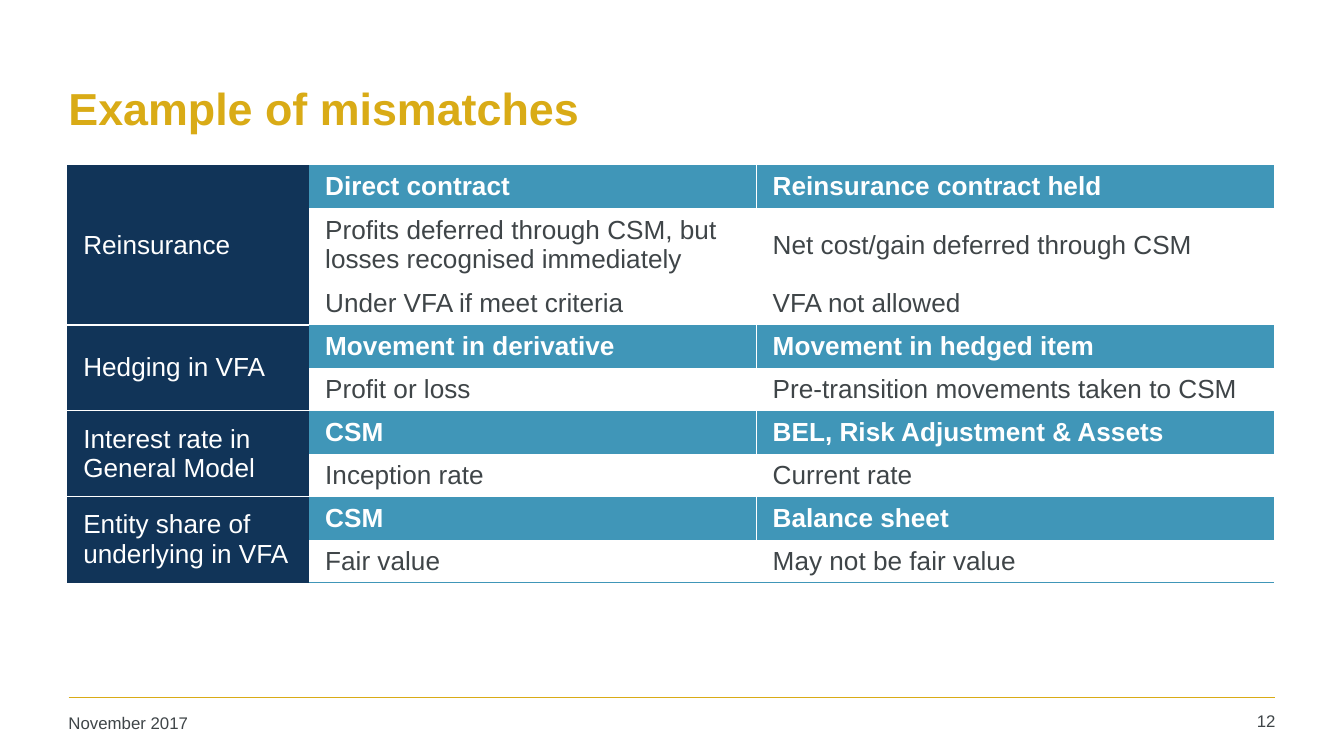
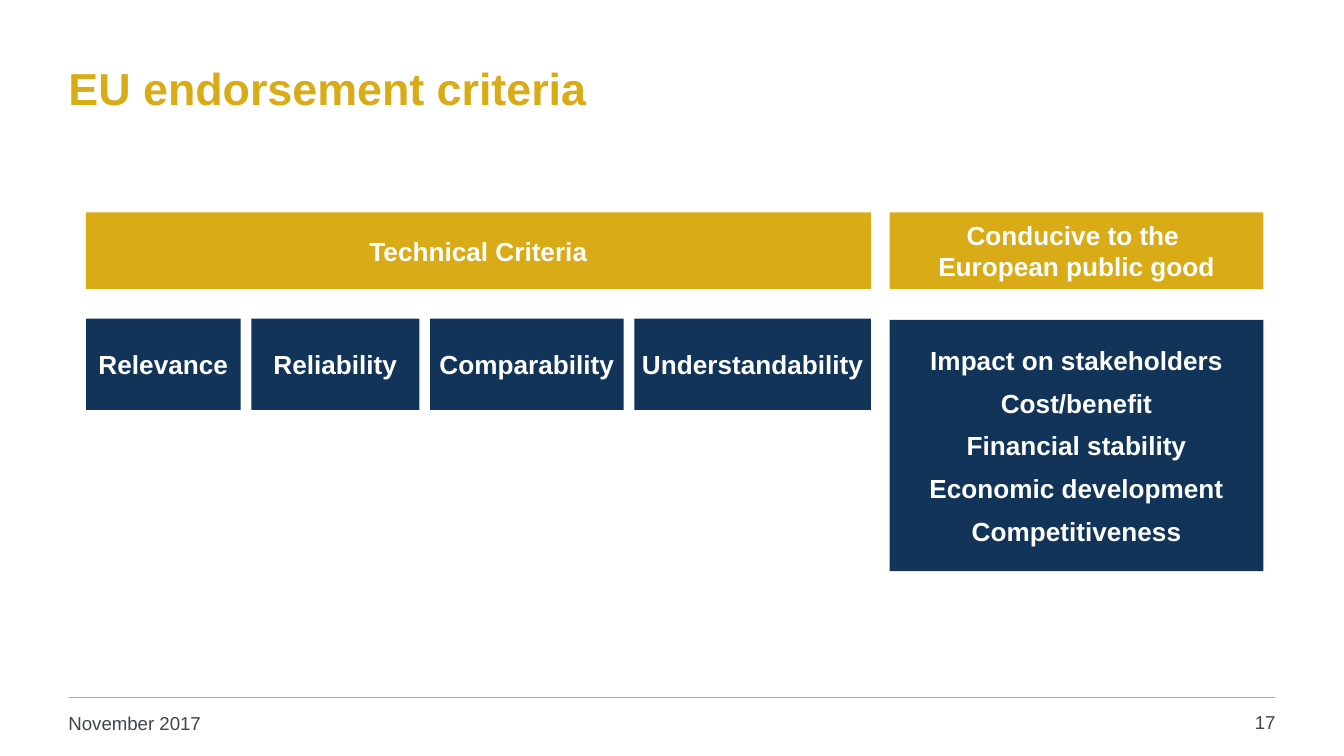
import pptx
import pptx.util
import pptx.dml.color
import pptx.enum.shapes
import pptx.enum.text
import pptx.oxml.ns
from lxml import etree

Inches = pptx.util.Inches
Pt = pptx.util.Pt
RGBColor = pptx.dml.color.RGBColor
Align = pptx.enum.text.PP_ALIGN
MIDDLE = pptx.enum.text.MSO_ANCHOR.MIDDLE
qn = pptx.oxml.ns.qn

GOLD = RGBColor(0xD9, 0xAB, 0x16)
NAVY = RGBColor(0x11, 0x34, 0x58)
BLUE = RGBColor(0x40, 0x96, 0xB8)
GREY = RGBColor(0x3F, 0x45, 0x48)
WHITE = RGBColor(0xFF, 0xFF, 0xFF)

MISMATCHES = [
    ("Reinsurance", [
        ("Direct contract", "Reinsurance contract held"),
        ("Profits deferred through CSM, but losses recognised immediately",
         "Net cost/gain deferred through CSM"),
        ("Under VFA if meet criteria", "VFA not allowed")]),
    ("Hedging in VFA", [
        ("Movement in derivative", "Movement in hedged item"),
        ("Profit or loss", "Pre-transition movements taken to CSM")]),
    ("Interest rate in General Model", [
        ("CSM", "BEL, Risk Adjustment & Assets"),
        ("Inception rate", "Current rate")]),
    ("Entity share of underlying in VFA", [
        ("CSM", "Balance sheet"),
        ("Fair value", "May not be fair value")]),
]
CRITERIA = [("Relevance", 1.15), ("Reliability", 1.25),
            ("Comparability", 1.44), ("Understandability", 1.76)]
PUBLIC_GOOD = ["Impact on stakeholders", "Cost/benefit", "Financial stability",
               "Economic development", "Competitiveness"]


class Deck:
    """Holds the shared style and the slide being built."""

    def __init__(self):
        self.prs = pptx.Presentation()
        self.prs.slide_width = Inches(10)
        self.prs.slide_height = Inches(10) * 9 // 16

    def slide(self, title, number, footer_size, title_lift=0):
        self.s = self.prs.slides.add_slide(self.prs.slide_layouts[6])
        self.rule(0.51, 9.49, 5.19)
        tf = self.text(title, 0.43, 0.33, 9.07, 0.94, 24, GOLD, bold=True, anchor=MIDDLE)
        tf.margin_bottom += Inches(2 * title_lift)
        self.text("November 2017", 0.43, 5.26, 2.2, 0.27, footer_size, GREY)
        self.text(number, 8.86, 5.25, 0.71, 0.28, footer_size, GREY, align=Align.RIGHT)

    def style(self, tf, size, color, bold=False, align=Align.LEFT):
        for p in tf.paragraphs:
            p.alignment = align
            for r in p.runs:
                r.font.name = "Arial"
                r.font.size = Pt(size)
                r.font.bold = bold
                r.font.color.rgb = color

    def margins(self, target, x, y):
        target.margin_left = target.margin_right = Inches(x)
        target.margin_top = target.margin_bottom = Inches(y)

    def rule(self, left, right, top):
        line = self.s.shapes.add_connector(
            pptx.enum.shapes.MSO_CONNECTOR.STRAIGHT,
            Inches(left), Inches(top), Inches(right), Inches(top))
        line.line.color.rgb = GOLD
        line.line.width = Pt(1)
        etree.SubElement(line._element.spPr, qn("a:effectLst"))

    def text(self, text, left, top, width, height, size, color,
             bold=False, align=Align.LEFT, anchor=pptx.enum.text.MSO_ANCHOR.TOP):
        sp = self.s.shapes.add_textbox(Inches(left), Inches(top), Inches(width), Inches(height))
        tf = sp.text_frame
        tf.word_wrap = True
        tf.vertical_anchor = anchor
        self.margins(tf, 0.08, 0.04)
        tf.text = text
        self.style(tf, size, color, bold, align)
        return tf

    def box(self, lines, left, top, width, height, fill, inset=0.06, space_after=0):
        sp = self.s.shapes.add_shape(
            pptx.enum.shapes.MSO_SHAPE.RECTANGLE,
            Inches(left), Inches(top), Inches(width), Inches(height))
        sp.shadow.inherit = False
        sp.fill.solid()
        sp.fill.fore_color.rgb = fill
        sp.line.fill.background()
        tf = sp.text_frame
        tf.word_wrap = True
        tf.vertical_anchor = MIDDLE
        self.margins(tf, inset, 0.06)
        tf.text = "\n".join(lines)
        self.style(tf, 14, WHITE, True, Align.CENTER)
        for p in tf.paragraphs:
            p.space_after = Pt(space_after)

    def borders(self, cell, **colors):
        tcPr = cell._tc.get_or_add_tcPr()
        for i, side in enumerate("LRTB"):
            color = colors.get(side)
            ln = etree.Element(qn("a:ln" + side), w=str(Pt(1)))
            if color is None:
                etree.SubElement(ln, qn("a:noFill"))
            else:
                fill = etree.SubElement(ln, qn("a:solidFill"))
                etree.SubElement(fill, qn("a:srgbClr"), val=str(color))
            tcPr.insert(i, ln)

    def cell(self, cell, text, fill, color, bold=False):
        cell.text = text
        cell.vertical_anchor = MIDDLE
        self.margins(cell, 0.12, 0.04)
        if fill is None:
            cell.fill.background()
        else:
            cell.fill.solid()
            cell.fill.fore_color.rgb = fill
        self.style(cell.text_frame, 14, color, bold)

    def table(self, groups, left, top, widths, heights):
        table = self.s.shapes.add_table(
            len(heights), len(widths), Inches(left), Inches(top),
            Inches(sum(widths)), Inches(sum(heights))).table
        table.first_row = table.horz_banding = False
        for column, width in zip(table.columns, widths):
            column.width = Inches(width)
        for row, height in zip(table.rows, heights):
            row.height = Inches(height)
        first = 0
        for topic, rows in groups:
            end = first + len(rows)
            for y, pair in enumerate(rows, first):
                header = y == first
                last = y == len(heights) - 1
                self.cell(table.cell(y, 0), topic if header else "", NAVY, WHITE)
                self.borders(table.cell(y, 0),
                             T=WHITE if header and y > 0 else None,
                             B=WHITE if end < len(heights) else None)
                for x, text in enumerate(pair, 1):
                    cell = table.cell(y, x)
                    self.cell(cell, text, BLUE if header else None,
                              WHITE if header else GREY, header)
                    self.borders(cell, B=BLUE if last else None,
                                 **{"R" if x == 1 else "L": WHITE})
            table.cell(first, 0).merge(table.cell(end - 1, 0))
            first = end


def main():
    deck = Deck()

    deck.slide("Example of mismatches", "12", 9)
    deck.table(MISMATCHES, 0.5, 1.23, [1.8, 3.33, 3.85], [0.32, 0.54] + [0.32] * 7)

    deck.slide("EU endorsement criteria", "17", 10, title_lift=0.15)
    deck.box(["Technical Criteria"], 0.64, 1.58, 5.84, 0.57, GOLD)
    left = 0.64
    for name, width in CRITERIA:
        deck.box([name], left, 2.37, width, 0.68, NAVY, inset=0)
        left += width + 0.08
    deck.box(["Conducive to the ", "European public good"], 6.62, 1.58, 2.78, 0.57, GOLD)
    deck.box(PUBLIC_GOOD, 6.62, 2.38, 2.78, 1.87, NAVY, space_after=6)

    deck.prs.save("out.pptx")


if __name__ == "__main__":
    main()
